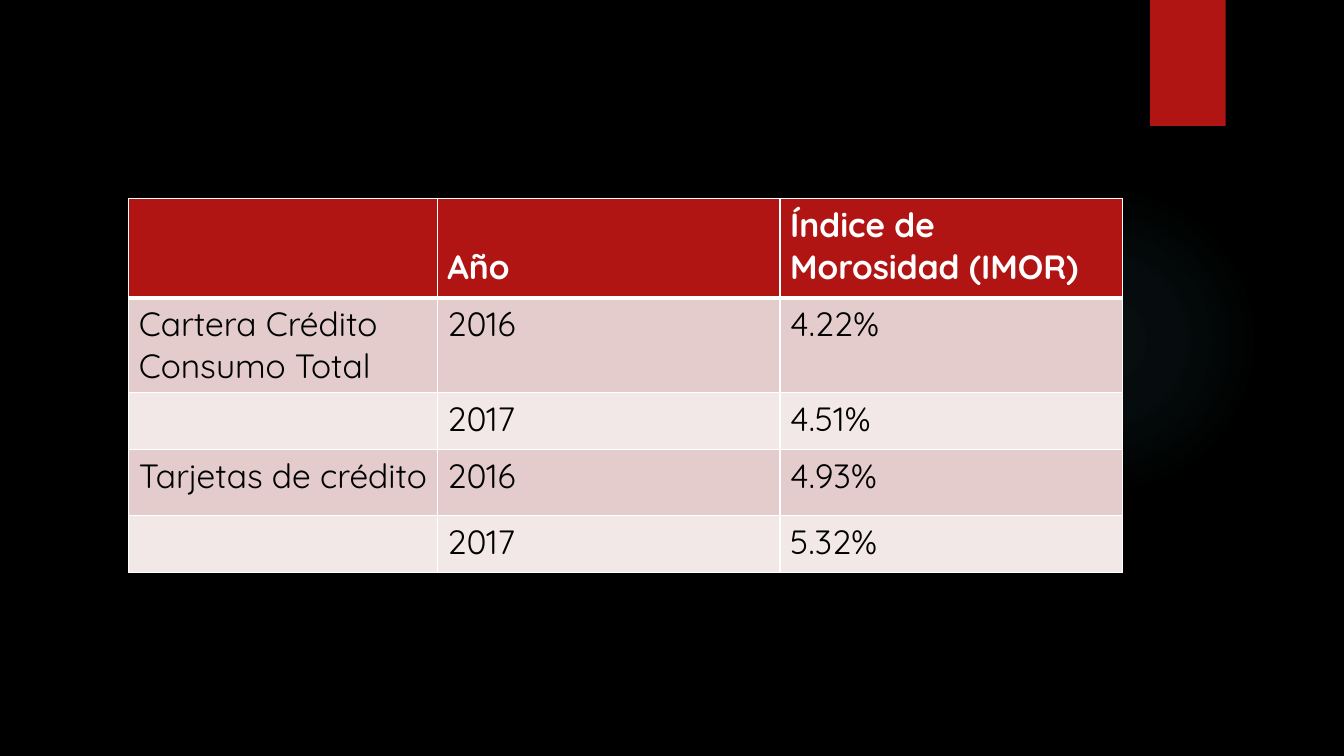
from dataclasses import dataclass

from lxml import etree
from pptx import Presentation
from pptx import util as u
from pptx.dml.color import RGBColor
from pptx.enum import shapes, text
from pptx.oxml import parse_xml
from pptx.oxml import ns

COLORS = {
    "background": "000000",
    "red": "B01513",
    "glow": "50B9C1",
    "pink": "E4CCCC",
    "pale": "F2E8E7",
    "white": "FFFFFF",
    "black": "000000",
}
COLUMN_WIDTHS = (220.4, 244.8, 244.8)
TABLE_LEFT, TABLE_TOP = 92, 141.8


@dataclass(frozen=True)
class TableRow:
    texts: tuple[str, str, str]
    height: float
    fill: str
    header: bool = False


@dataclass(frozen=True)
class Backdrop:
    kind: shapes.MSO_SHAPE
    left: float
    top: float
    width: float
    height: float
    fill: str


ROWS = (
    TableRow(("", "Año", "Índice de Morosidad (IMOR)"), 71.3, "red", True),
    TableRow(("Cartera Crédito Consumo Total", "2016", "4.22%"), 67.2, "pink"),
    TableRow(("", "2017", "4.51%"), 41, "pale"),
    TableRow(("Tarjetas de crédito", "2016", "4.93%"), 46.8, "pink"),
    TableRow(("", "2017", "5.32%"), 41, "pale"),
)
GLOW = Backdrop(shapes.MSO_SHAPE.OVAL, 677.5, 131.8, 221.8, 221.8, "glow")
TAB = Backdrop(shapes.MSO_SHAPE.RECTANGLE, 821.5, 0, 54, 90, "red")


def rgb(name: str) -> RGBColor:
    return RGBColor.from_string(COLORS[name])


def apply_format(target, values: dict) -> None:
    for name, value in values.items():
        setattr(target, name, value)


def add_backdrop(slide, item: Backdrop):
    shape = slide.shapes.add_shape(
        item.kind, u.Pt(item.left), u.Pt(item.top), u.Pt(item.width), u.Pt(item.height)
    )
    shape.shadow.inherit = False
    shape.fill.solid()
    shape.fill.fore_color.rgb = rgb(item.fill)
    shape.line.fill.background()
    return shape


def fade_out(shape, color: str) -> None:
    """Replace the solid fill with a nearly clear radial gradient."""
    stops = "".join(
        f'<a:gs pos="{position * 1000}"><a:srgbClr val="{COLORS[color]}">'
        f'<a:alpha val="{alpha * 1000}"/></a:srgbClr></a:gs>'
        for position, alpha in ((0, 7), (36, 6), (69, 0))
    )
    gradient = parse_xml(
        f'<a:gradFill {ns.nsdecls("a")} rotWithShape="1"><a:gsLst>{stops}</a:gsLst>'
        '<a:path path="circle"><a:fillToRect l="50000" t="50000" r="50000" b="50000"/>'
        "</a:path></a:gradFill>"
    )
    properties = shape.element.spPr
    properties.replace(properties.find(ns.qn("a:solidFill")), gradient)


def add_shadow(shape) -> None:
    shadow = parse_xml(
        f'<a:outerShdw {ns.nsdecls("a")} blurRad="{u.Pt(3)}" dist="{u.Pt(2)}" '
        'dir="5400000" rotWithShape="0">'
        f'<a:srgbClr val="{COLORS["black"]}"><a:alpha val="45000"/></a:srgbClr></a:outerShdw>'
    )
    shape.element.spPr.find(ns.qn("a:effectLst")).append(shadow)


def add_borders(cell, widths: dict[str, float]) -> None:
    properties = cell._tc.get_or_add_tcPr()
    for side, width in widths.items():
        line = etree.SubElement(properties, ns.qn(f"a:ln{side}"), w=str(u.Pt(width)))
        fill = etree.SubElement(line, ns.qn("a:solidFill"))
        etree.SubElement(fill, ns.qn("a:srgbClr"), val=COLORS["white"])


def fill_cell(cell, content: str, row: TableRow, top_border: float) -> None:
    add_borders(cell, {"L": 1, "R": 1, "T": top_border, "B": 3 if row.header else 1})
    cell.fill.solid()
    cell.fill.fore_color.rgb = rgb(row.fill)
    if row.header:
        apply_format(cell, {
            "vertical_anchor": text.MSO_ANCHOR.BOTTOM,
            "margin_bottom": u.Pt(7.5),
        })
    if content:
        run = cell.text_frame.paragraphs[0].add_run()
        run.text = content
        apply_format(run.font, {"name": "Quicksand", "size": u.Pt(24), "bold": row.header})
        run.font.color.rgb = rgb("white" if row.header else "black")


def add_default_table(slide) -> None:
    frame = slide.shapes.add_table(
        len(ROWS), len(COLUMN_WIDTHS), u.Pt(TABLE_LEFT), u.Pt(TABLE_TOP),
        u.Pt(sum(COLUMN_WIDTHS)), u.Pt(sum(row.height for row in ROWS)),
    )
    table = frame.table
    table.horz_banding = False
    for column, width in zip(table.columns, COLUMN_WIDTHS):
        column.width = u.Pt(width)
    for index, row in enumerate(ROWS):
        table.rows[index].height = u.Pt(row.height)
        top_border = 3 if index and ROWS[index - 1].header else 1
        for cell, content in zip(table.rows[index].cells, row.texts):
            fill_cell(cell, content, row, top_border)


def main() -> None:
    presentation = Presentation()
    apply_format(presentation, {"slide_width": u.Pt(960), "slide_height": u.Pt(540)})
    slide = presentation.slides.add_slide(presentation.slide_layouts[6])

    # Background, glow and red tab
    slide.background.fill.solid()
    slide.background.fill.fore_color.rgb = rgb("background")
    fade_out(add_backdrop(slide, GLOW), GLOW.fill)
    add_shadow(add_backdrop(slide, TAB))

    # Default rates by portfolio and year
    add_default_table(slide)

    presentation.save("out.pptx")


if __name__ == "__main__":
    main()
